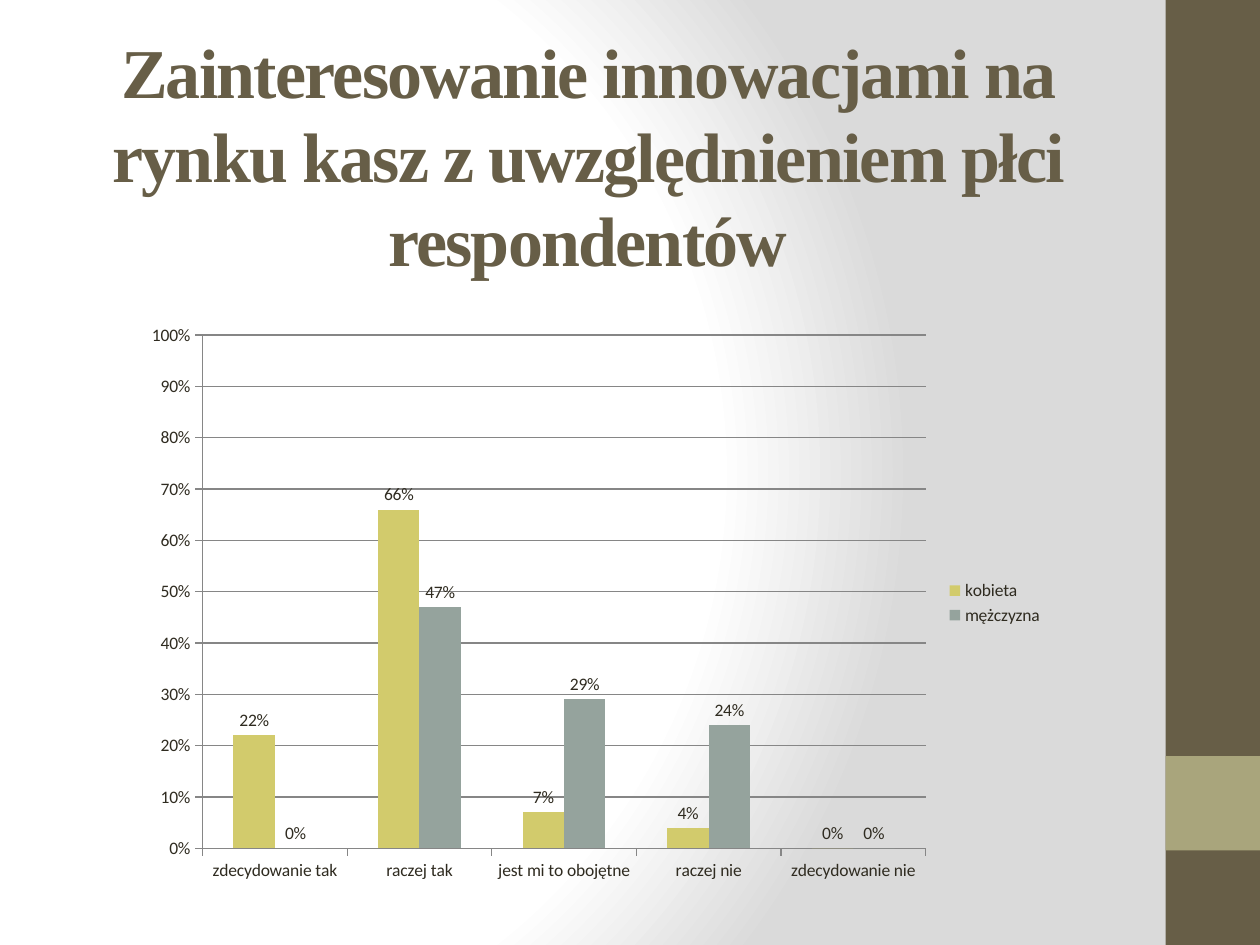
import dataclasses

import lxml.etree
import pptx
import pptx.chart.data
import pptx.dml.color
import pptx.enum.chart
import pptx.enum.text
import pptx.oxml
import pptx.oxml.ns
import pptx.util

Inches = pptx.util.Inches
Pt = pptx.util.Pt
XL = pptx.enum.chart

HUES = {
    "brown": "675E47",
    "olive": "A9A57C",
    "lime": "D2CB6C",
    "sage": "95A39D",
    "ink": "2F2B20",
    "rule": "868686",
    "white": "FFFFFF",
    "grey": "DADADA",
}


@dataclasses.dataclass
class Band:
    top: float
    height: float
    hue: str


@dataclasses.dataclass
class Group:
    name: str
    shares: tuple
    hue: str


BANDS = [Band(0, 7.5, "brown"), Band(6, 0.75, "olive")]
CATS = ["zdecydowanie tak", "raczej tak", "jest mi to obojętne",
        "raczej nie", "zdecydowanie nie"]
GROUPS = [
    Group("kobieta", (0.22, 0.66, 0.07, 0.04, 0), "lime"),
    Group("mężczyzna", (0, 0.47, 0.29, 0.24, 0), "sage"),
]


def color(hue: str) -> pptx.dml.color.RGBColor:
    return pptx.dml.color.RGBColor.from_string(HUES[hue])


def apply(target, values: dict) -> None:
    for name, value in values.items():
        setattr(target, name, value)


def paint_back(slide) -> None:
    """Fill the background with a radial gradient."""
    fill = slide.background.fill
    fill.solid()
    stops = "".join(
        f'<a:gs pos="{pos * 1000}"><a:srgbClr val="{HUES[hue]}"/></a:gs>'
        for pos, hue in ((0, "white"), (75, "white"), (100, "grey")))
    grad = pptx.oxml.parse_xml(
        f'<a:gradFill {pptx.oxml.ns.nsdecls("a")} rotWithShape="1">'
        f'<a:gsLst>{stops}</a:gsLst><a:path path="circle">'
        '<a:fillToRect l="20000" t="50000" r="100000" b="50000"/>'
        '</a:path></a:gradFill>')
    solid = next(slide.element.iter(pptx.oxml.ns.qn("a:solidFill")))
    solid.getparent().replace(solid, grad)


def draw_band(slide, band: Band) -> None:
    shape = slide.shapes.add_shape(
        pptx.enum.shapes.MSO_SHAPE.RECTANGLE, Inches(9.25), Inches(band.top),
        Inches(0.75), Inches(band.height))
    shape.shadow.inherit = False
    shape.fill.solid()
    shape.fill.fore_color.rgb = color(band.hue)
    shape.line.fill.background()


def draw_title(slide, text: str) -> None:
    box = slide.shapes.add_textbox(
        Inches(0.5), Inches(0), Inches(8.33), Inches(1.7))
    frame = box.text_frame
    apply(frame, {
        "word_wrap": True,
        "vertical_anchor": pptx.enum.text.MSO_ANCHOR.TOP,
        "margin_top": Inches(0.23),
    })
    para = frame.paragraphs[0]
    para.alignment = pptx.enum.text.PP_ALIGN.CENTER
    run = para.add_run()
    run.text = text
    apply(run.font, {"name": "Times New Roman", "size": Pt(40), "bold": True})
    run.font.color.rgb = color("brown")
    run.font._element.set("spc", "-100")


def draw_chart(slide) -> None:
    data = pptx.chart.data.CategoryChartData(number_format="0%")
    data.categories = CATS
    for group in GROUPS:
        data.add_series(group.name, group.shares)
    chart = slide.shapes.add_chart(
        XL.XL_CHART_TYPE.COLUMN_CLUSTERED, Inches(1.06), Inches(2.49),
        Inches(7.32), Inches(4.59), data).chart
    apply(chart, {"has_title": False, "has_legend": True})
    apply(chart.font, {"name": "Calibri", "size": Pt(10)})
    chart.font.color.rgb = color("ink")
    apply(chart.legend, {
        "position": XL.XL_LEGEND_POSITION.RIGHT,
        "include_in_layout": False,
    })

    # Columns and their labels
    plot = chart.plots[0]
    apply(plot, {"gap_width": 150, "overlap": 0,
                 "vary_by_categories": False, "has_data_labels": True})
    apply(plot.data_labels, {
        "show_value": True,
        "number_format": "0%",
        "number_format_is_linked": False,
        "position": XL.XL_LABEL_POSITION.OUTSIDE_END,
    })
    for series, group in zip(plot.series, GROUPS):
        series.format.fill.solid()
        series.format.fill.fore_color.rgb = color(group.hue)

    # Axes and grid
    side = chart.value_axis
    apply(side, {"minimum_scale": 0, "maximum_scale": 1, "major_unit": 0.1,
                 "has_major_gridlines": True})
    apply(side.tick_labels, {"number_format": "0%",
                             "number_format_is_linked": False})
    for axis in (side, chart.category_axis):
        axis.major_tick_mark = XL.XL_TICK_MARK.OUTSIDE
    for part in (side, chart.category_axis, side.major_gridlines):
        part.format.line.color.rgb = color("rule")
        part.format.line.width = Pt(0.75)


def main() -> None:
    deck = pptx.Presentation()
    apply(deck, {"slide_width": Inches(10), "slide_height": Inches(7.5)})
    slide = deck.slides.add_slide(deck.slide_layouts[6])
    paint_back(slide)
    for band in BANDS:
        draw_band(slide, band)
    draw_title(slide, "Zainteresowanie innowacjami na rynku kasz "
                      "z uwzględnieniem płci respondentów")
    draw_chart(slide)
    deck.save("out.pptx")


if __name__ == "__main__":
    main()
